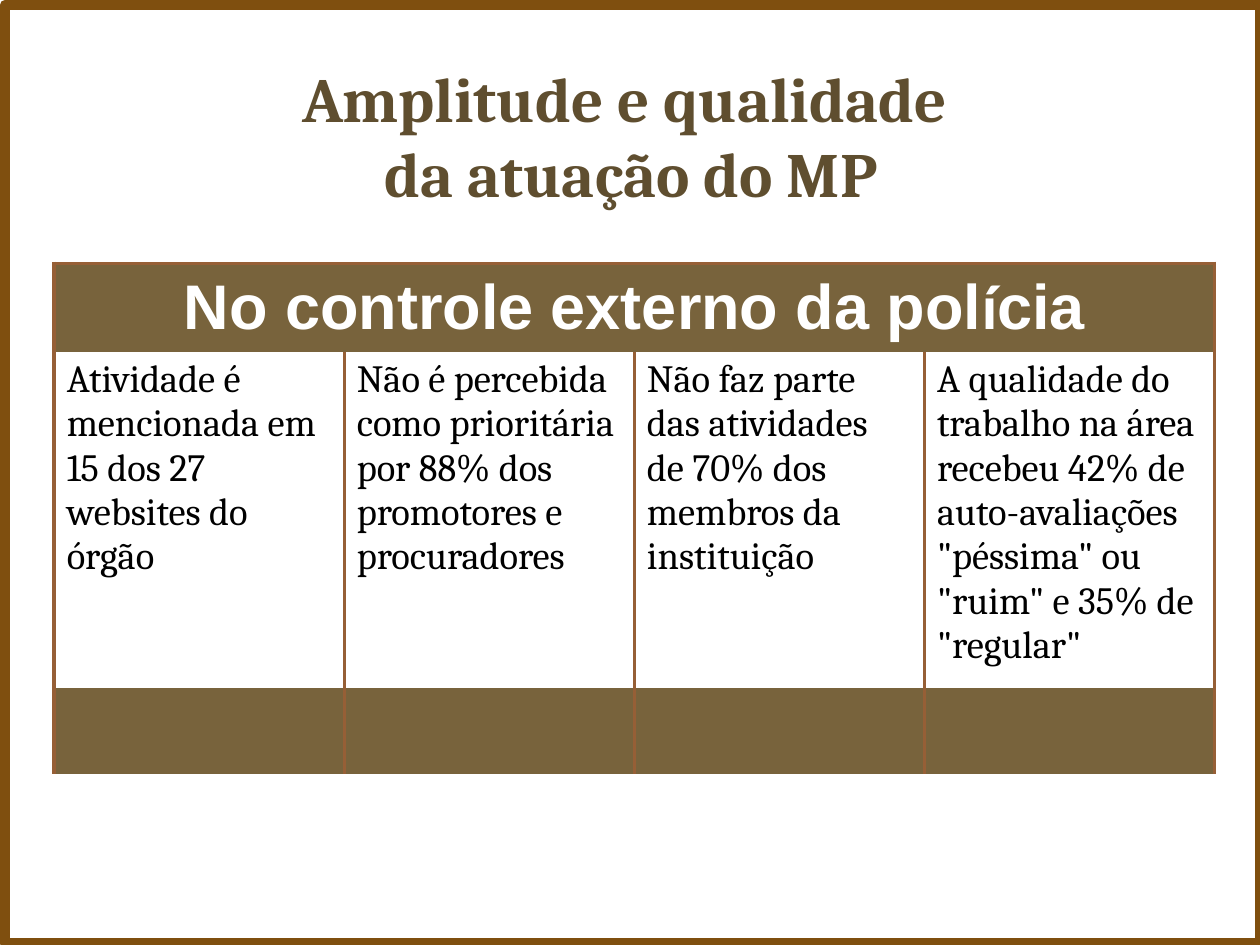
import pptx
import pptx.dml.color
import pptx.enum.shapes
import pptx.enum.text
import pptx.oxml
import pptx.oxml.ns
import pptx.util

COLORS = {"white": "FFFFFF", "black": "000000", "frame": "7F4F0F",
          "title": "5F4E2F", "band": "78633C", "border": "965F36"}
HEADING = [("No controle externo da pol", "Arial"), ("í", "Calibri"), ("cia", "Arial")]
FINDINGS = [
    "Atividade é mencionada em 15 dos 27 websites do órgão",
    "Não é percebida como prioritária por 88% dos promotores e procuradores",
    "Não faz parte das atividades de 70% dos membros da instituição",
    'A qualidade do trabalho na área recebeu 42% de auto-avaliações "péssima" ou "ruim" e 35% de "regular"',
]


class SlideBuilder:
    """Hold the style and the current slide, with lengths as shares of the slide's size."""

    def __init__(self, presentation):
        self.width = presentation.slide_width
        self.height = presentation.slide_height
        self.slide = presentation.slides.add_slide(presentation.slide_layouts[6])

    def color(self, name):
        return pptx.dml.color.RGBColor.from_string(COLORS[name])

    def place(self, left, top, width, height):
        return (int(left * self.width), int(top * self.height),
                int(width * self.width), int(height * self.height))

    def style(self, paragraph, size, color, bold=False, font=None, centered=False):
        paragraph.font.size = pptx.util.Pt(size)
        paragraph.font.color.rgb = self.color(color)
        paragraph.font.bold = bold
        if font:
            paragraph.font.name = font
        if centered:
            paragraph.alignment = pptx.enum.text.PP_ALIGN.CENTER

    def fill(self, target, color):
        target.fill.solid()
        target.fill.fore_color.rgb = self.color(color)

    def frame(self, box, color, weight):
        shape = self.slide.shapes.add_shape(
            pptx.enum.shapes.MSO_SHAPE.RECTANGLE, *self.place(*box))
        shape.shadow.inherit = False
        self.fill(shape, "white")
        shape.line.color.rgb = self.color(color)
        shape.line.width = pptx.util.Pt(weight)

    def title(self, box, text):
        shape = self.slide.shapes.add_textbox(*self.place(*box))
        self.fill(shape, "white")
        shape.text_frame.word_wrap = True
        shape.text_frame.vertical_anchor = pptx.enum.text.MSO_ANCHOR.MIDDLE
        paragraph = shape.text_frame.paragraphs[0]
        paragraph.text = text
        self.style(paragraph, 36, "title", True, "Cambria", True)

    def borders(self, cell, visible):
        properties = cell._tc.get_or_add_tcPr()
        namespace = pptx.oxml.ns.nsdecls("a")
        for index, side in enumerate(("L", "R", "T", "B")):
            paint = "<a:noFill/>"
            if side in visible:
                paint = f'<a:solidFill><a:srgbClr val="{COLORS["border"]}"/></a:solidFill>'
            line = pptx.oxml.parse_xml(
                f'<a:ln{side} {namespace} w="{pptx.util.Pt(2.25)}">{paint}</a:ln{side}>')
            properties.insert(index, line)

    def table(self, box, row_shares, heading, findings):
        table = self.slide.shapes.add_table(
            len(row_shares), len(findings), *self.place(*box)).table
        table.first_row = table.horz_banding = False
        for row, share in zip(table.rows, row_shares):
            row.height = int(share * self.height)
        for row in range(len(row_shares)):
            for column in range(len(findings)):
                cell = table.cell(row, column)
                if row == 1:
                    cell.fill.background()
                else:
                    self.fill(cell, "band")
                self.borders(cell, "LRT" if row == 0 else "LR")
        header = table.cell(0, 0)
        header.merge(table.cell(0, len(findings) - 1))
        header.vertical_anchor = pptx.enum.text.MSO_ANCHOR.BOTTOM
        paragraph = header.text_frame.paragraphs[0]
        self.style(paragraph, 36, "white", True, centered=True)
        for text, font in heading:
            run = paragraph.add_run()
            run.text = text
            run.font.name = font
        for column, text in enumerate(findings):
            paragraph = table.cell(1, column).text_frame.paragraphs[0]
            paragraph.text = text
            self.style(paragraph, 22, "black", font="Cambria")


def main():
    presentation = pptx.Presentation()
    presentation.slide_width = pptx.util.Inches(10)
    presentation.slide_height = pptx.util.Inches(7.5)
    builder = SlideBuilder(presentation)
    inch_x, inch_y = 1 / 10, 1 / 7.5
    builder.frame((0.04 * inch_x, 0.04 * inch_y, 9.96 * inch_x, 7.45 * inch_y), "frame", 6)
    builder.title((0.51 * inch_x, 0.52 * inch_y, 9 * inch_x, 1.1 * inch_y),
                  "Amplitude e qualidade \vda atuação do MP")
    builder.table((0.43 * inch_x, 2.09 * inch_y, 9.21 * inch_x, 3.85 * inch_y),
                  [height * inch_y for height in (0.55, 2.61, 0.69)], HEADING, FINDINGS)
    presentation.save("out.pptx")


if __name__ == "__main__":
    main()
